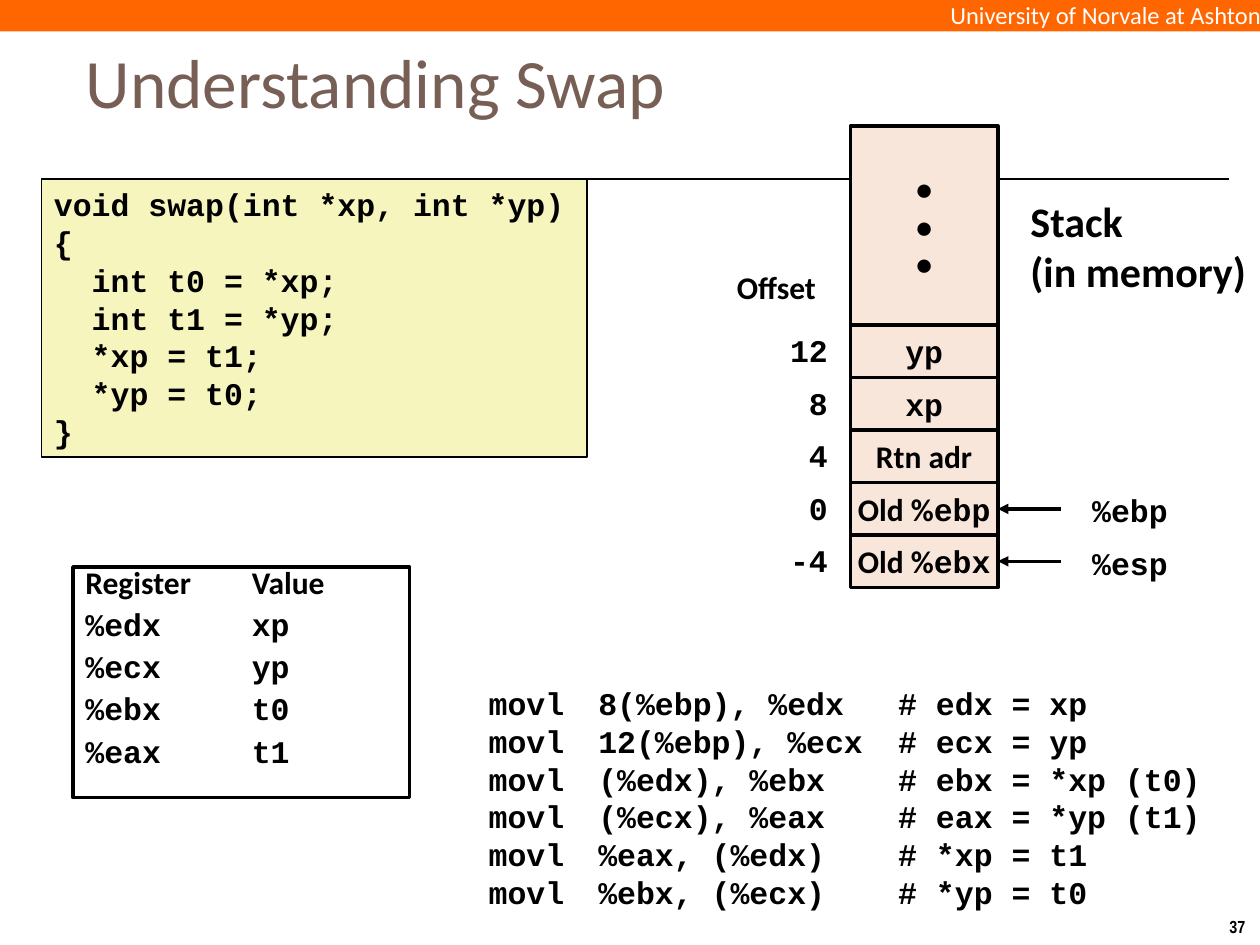
"""Build the slide that explains swap with its code, stack, registers and assembly."""
import pptx
import pptx.dml.color
import pptx.enum.shapes
import pptx.enum.text
import pptx.oxml
import pptx.oxml.ns
import pptx.util
from pptx.util import Inches

SANS, MONO = "Calibri", "Courier New"
BLACK, PEACH = "000000", "F8E6DA"
ALIGN = pptx.enum.text.PP_ALIGN
ANCHOR = pptx.enum.text.MSO_ANCHOR
STACK_LEFT, STACK_TOP, CELL_W, CELL_H = 6.75, 2.58, 1.17, 5 / 12

CODE = ["void swap(int *xp, int *yp)", "{", "  int t0 = *xp;", "  int t1 = *yp;",
        "  *xp = t1;", "  *yp = t0;", "}"]
REGISTERS = ["Register\tValue", "%edx\txp", "%ecx\typ", "%ebx\tt0", "%eax\tt1"]
ASSEMBLY = ["\tmovl\t8(%ebp), %edx\t# edx = xp",
            "\tmovl\t12(%ebp), %ecx\t# ecx = yp",
            "\tmovl\t(%edx), %ebx\t# ebx = *xp (t0)",
            "\tmovl\t(%ecx), %eax\t# eax = *yp (t1)",
            "\tmovl\t%eax, (%edx)\t# *xp = t1",
            "\tmovl\t%ebx, (%ecx)\t# *yp = t0"]
STACK = [("12", [("yp", MONO)], None),
         ("8", [("xp", MONO)], None),
         ("4", [("Rtn adr", SANS)], None),
         ("0", [("Old %", SANS), ("ebp", MONO)], "%ebp"),
         ("-4", [("Old %", SANS), ("ebx", MONO)], "%esp")]


def rgb(value):
    """Return the colour for a hex string."""
    return pptx.dml.color.RGBColor.from_string(value)


def style_run(r, font, size=18, color=BLACK, bold=True):
    """Format one run."""
    r.font.name, r.font.size, r.font.bold = font, pptx.util.Pt(size), bold
    r.font.color.rgb = rgb(color)


def set_tabs(p, stops):
    """Give a paragraph left tab stops, in inches."""
    tabs = pptx.oxml.parse_xml("<a:tabLst %s/>" % pptx.oxml.ns.nsdecls("a"))
    for stop in stops:
        tab = tabs.makeelement(pptx.oxml.ns.qn("a:tab"),
                               {"pos": str(Inches(stop)), "algn": "l"})
        tabs.append(tab)
    p._p.get_or_add_pPr().append(tabs)


def write(s, lines, font=SANS, align=ALIGN.LEFT, anchor=ANCHOR.TOP, wrap=False,
          tabs=(), **look):
    """Fill a shape with lines, each a string or a list of (text, font)."""
    tf = s.text_frame
    tf.word_wrap, tf.vertical_anchor = wrap, anchor
    for i, line in enumerate(lines):
        p = tf.paragraphs[0] if i == 0 else tf.add_paragraph()
        p.alignment = align
        for text, face in [(line, font)] if isinstance(line, str) else line:
            r = p.add_run()
            r.text = text
            style_run(r, face, **look)
        if tabs:
            set_tabs(p, tabs)
    return tf


def add_box(slide, x, y, w, h, fill=None, line=None):
    """Add a rectangle, filled and outlined only where asked."""
    s = slide.shapes.add_shape(pptx.enum.shapes.MSO_SHAPE.RECTANGLE,
                               Inches(x), Inches(y), Inches(w), Inches(h))
    s.shadow.inherit = False
    if fill:
        s.fill.solid()
        s.fill.fore_color.rgb = rgb(fill)
    else:
        s.fill.background()
    if line:
        s.line.color.rgb, s.line.width = rgb(BLACK), pptx.util.Pt(line)
    else:
        s.line.fill.background()
    return s


def add_label(slide, x, y, w, h, lines, **look):
    """Add a text box and return its text frame."""
    s = slide.shapes.add_textbox(Inches(x), Inches(y), Inches(w), Inches(h))
    return write(s, lines, **look)


def add_line(slide, x1, y1, x2, y2, width):
    """Add a plain black straight line."""
    s = slide.shapes.add_connector(pptx.enum.shapes.MSO_CONNECTOR.STRAIGHT,
                                   Inches(x1), Inches(y1), Inches(x2), Inches(y2))
    s.line.color.rgb, s.line.width = rgb(BLACK), pptx.util.Pt(width)
    s._element.spPr.append(
        pptx.oxml.parse_xml("<a:effectLst %s/>" % pptx.oxml.ns.nsdecls("a")))
    return s


def add_pointer(slide, cell, y, register):
    """Point a register name at the right side of a stack cell."""
    right = STACK_LEFT + CELL_W
    s = add_line(slide, right + 0.5, y, right, y, 2)
    s.end_connect(cell, 3)
    s.line._get_or_add_ln().append(pptx.oxml.parse_xml(
        '<a:tailEnd %s type="triangle"/>' % pptx.oxml.ns.nsdecls("a")))
    add_label(slide, right + 0.65, y - 0.19, 0.8, 0.4, [register], font=MONO)


def add_frame(slide):
    """Add the header band, the rule and the page number."""
    band = add_box(slide, 0, 0, 10.01, 0.25, fill="FF6600")
    tf = write(band, ["University of Norvale at Ashton"], align=ALIGN.RIGHT,
               size=14, color="FFFFFF", bold=False)
    tf.margin_left = tf.margin_right = tf.margin_top = tf.margin_bottom = 0
    add_line(slide, 0.42, 1.42, 9.75, 1.42, 1.5)
    add_label(slide, 9.66, 7.22, 0.34, 0.27, ["37"], font="Arial Narrow", size=10)


def add_title(slide, text):
    """Place and format the title placeholder."""
    s = slide.shapes.title
    s.left, s.top, s.width, s.height = (Inches(v) for v in (0.58, 0.33, 6.97, 0.63))
    write(s, [text], anchor=ANCHOR.MIDDLE, wrap=True,
          size=39.6, color="775F55", bold=False)


def add_registers(slide):
    """Add the boxed list of registers and their values."""
    s = add_box(slide, 0.58, 4.5, 2.67, 1.83, line=2)
    head, *rows = REGISTERS
    tf = write(s, [head] + [[(row, MONO)] for row in rows], wrap=True)
    for p in tf.paragraphs:
        p.line_spacing, p.space_before = 0.7, pptx.util.Pt(9)
        set_tabs(p, [1.32])


def add_stack(slide):
    """Add the stack cells with their offsets and pointers."""
    centred = {"align": ALIGN.CENTER, "anchor": ANCHOR.MIDDLE}
    top = add_box(slide, STACK_LEFT, 1, CELL_W, STACK_TOP - 1, PEACH, 2)
    write(top, ["•"] * 3, **centred)
    add_label(slide, 5.75, 2.08, 0.84, 0.4, ["Offset"])
    add_label(slide, 8.08, 1.5, 1.93, 0.91, ["Stack", "(in memory)"], size=24)
    for i, (offset, content, register) in enumerate(STACK):
        y = STACK_TOP + i * CELL_H
        cell = add_box(slide, STACK_LEFT, y, CELL_W, CELL_H, PEACH, 2)
        write(cell, [content], **centred)
        tf = add_label(slide, 6.17, y, 0.65, 0.4, [offset], font=MONO,
                       align=ALIGN.RIGHT, wrap=True)
        tf.margin_right = Inches(0.25)
        if register:
            add_pointer(slide, cell, y + CELL_H / 2, register)


def main():
    """Build and save the slide."""
    prs = pptx.Presentation()
    prs.slide_width, prs.slide_height = Inches(10), Inches(7.5)
    slide = prs.slides.add_slide(prs.slide_layouts[5])
    add_frame(slide)
    add_title(slide, "Understanding Swap")
    code = add_box(slide, 0.33, 1.42, 4.33, 2.21, "F6F5BD", 1)
    write(code, CODE, font=MONO, wrap=True)
    add_registers(slide)
    add_stack(slide)
    add_label(slide, 3.34, 5.38, 6.5, 1.92, ASSEMBLY, font=MONO, wrap=True,
              tabs=(0.44, 1.31, 3.69))
    prs.save("out.pptx")


if __name__ == "__main__":
    main()
